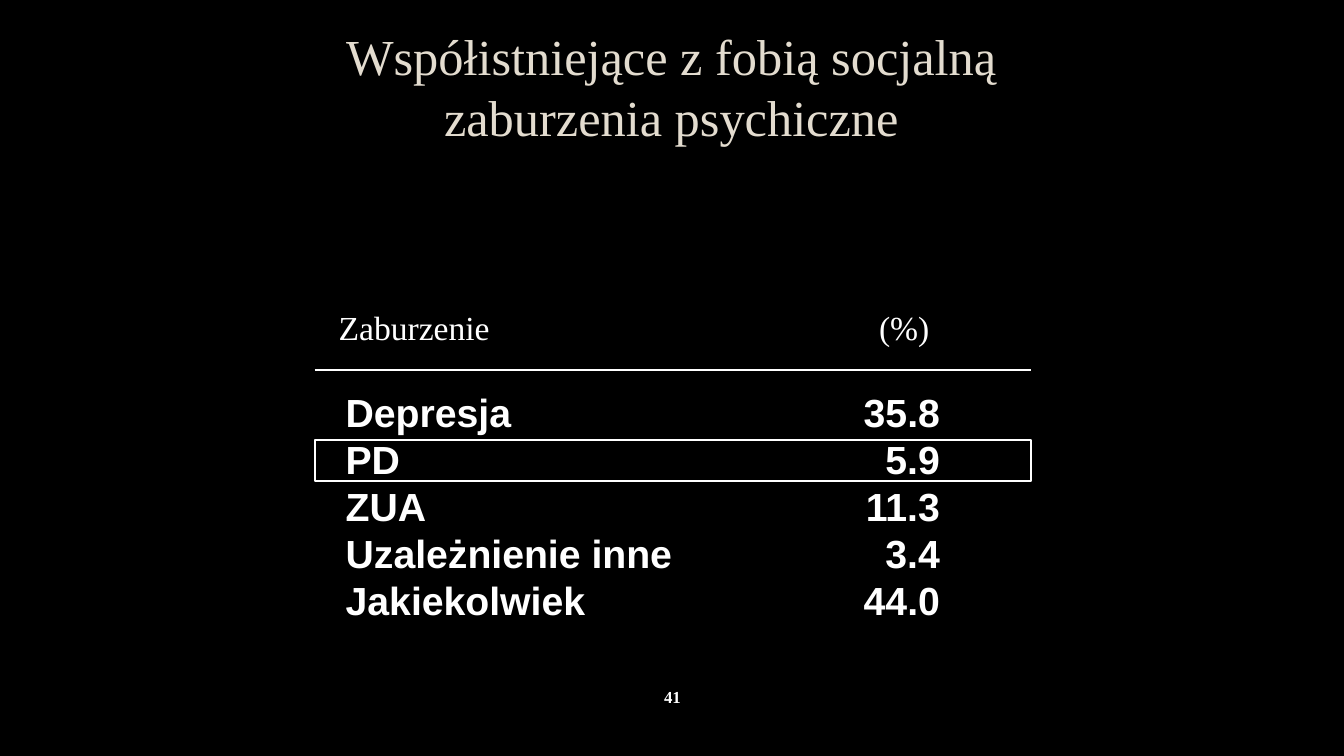
from lxml.etree import SubElement
from pptx import Presentation
from pptx.dml.color import RGBColor
from pptx.enum.shapes import MSO_CONNECTOR, MSO_SHAPE
from pptx.enum.text import MSO_ANCHOR, MSO_AUTO_SIZE, PP_ALIGN
from pptx.oxml.ns import qn
from pptx.util import Inches, Pt

WHITE, BLACK, CREAM = "FFFFFF", "000000", "E3DCCF"
SERIF, SANS = "Times New Roman", "Arial"
TABLE_LEFT, TABLE_WIDTH = 3.12, 7.11
RULE_TOP = 3.67
ROW_TOP, ROW_PITCH = 3.85, 0.466
HIGHLIGHTED_ROW, HIGHLIGHT_HEIGHT = 1, 0.4
DISORDERS = [
    ("Depresja", "35.8"),
    ("PD", "5.9"),
    ("ZUA", "11.3"),
    ("Uzależnienie inne", "3.4"),
    ("Jakiekolwiek", "44.0"),
]


def color(hex_value):
    return RGBColor.from_string(hex_value)


def place(shape, left, top, width, height):
    shape.left, shape.top = Inches(left), Inches(top)
    shape.width, shape.height = Inches(width), Inches(height)


def add_tab(paragraph, position, alignment):
    tabs = SubElement(paragraph._p.get_or_add_pPr(), qn("a:tabLst"))
    SubElement(tabs, qn("a:tab"), pos=str(Inches(position)), algn=alignment)


def write(frame, lines, size, face, hex_value, bold=False, align=PP_ALIGN.LEFT,
          anchor=MSO_ANCHOR.TOP, spacing=None, before=0, tab=None):
    frame.word_wrap = True
    frame.vertical_anchor = anchor
    frame.text = "\n".join(lines)
    for paragraph in frame.paragraphs:
        paragraph.alignment = align
        paragraph.space_before = Pt(before)
        if spacing:
            paragraph.line_spacing = Pt(spacing)
        if tab:
            add_tab(paragraph, *tab)
        font = paragraph.font
        font.size, font.name, font.bold = Pt(size), face, bold
        font.color.rgb = color(hex_value)


def add_text(slide, box, lines, *style, **layout):
    frame = slide.shapes.add_textbox(*map(Inches, box)).text_frame
    write(frame, lines, *style, **layout)
    return frame


def outline(shape):
    shape.line.color.rgb = color(WHITE)
    shape.line.width = Pt(1.5)


def add_title(slide, text):
    title = slide.shapes.title
    place(title, 2.37, 0.2, 8.58, 1.3)
    write(title.text_frame, [text], 36, SERIF, CREAM, align=PP_ALIGN.CENTER,
          anchor=MSO_ANCHOR.BOTTOM, spacing=43)
    title.text_frame.auto_size = MSO_AUTO_SIZE.NONE


def add_header_rule(slide):
    rule = slide.shapes.add_connector(
        MSO_CONNECTOR.STRAIGHT, Inches(TABLE_LEFT), Inches(RULE_TOP),
        Inches(TABLE_LEFT + TABLE_WIDTH), Inches(RULE_TOP))
    outline(rule)
    SubElement(rule._element.spPr, qn("a:effectLst"))


def add_highlight(slide):
    row_middle = ROW_TOP + (HIGHLIGHTED_ROW + 0.5) * ROW_PITCH
    highlight = slide.shapes.add_shape(
        MSO_SHAPE.RECTANGLE, Inches(TABLE_LEFT),
        Inches(row_middle + 0.02 - HIGHLIGHT_HEIGHT / 2),
        Inches(TABLE_WIDTH), Inches(HIGHLIGHT_HEIGHT))
    highlight.fill.background()
    highlight.shadow.inherit = False
    outline(highlight)


def add_page_number(slide, number):
    frame = add_text(slide, (5.89, 6.75, 1.56, 0.33), [number], 12, SERIF, WHITE,
                     bold=True, align=PP_ALIGN.CENTER, anchor=MSO_ANCHOR.MIDDLE)
    frame.margin_left = frame.margin_right = 0
    frame.margin_top = frame.margin_bottom = 0


def main():
    deck = Presentation()
    deck.slide_width, deck.slide_height = Inches(13.33), Inches(7.5)
    slide = deck.slides.add_slide(deck.slide_layouts[5])
    slide.background.fill.solid()
    slide.background.fill.fore_color.rgb = color(BLACK)

    add_title(slide, "Współistniejące z fobią socjalną zaburzenia psychiczne")

    # Column headings and rule
    add_text(slide, (3.26, 3, 7.39, 0.86), ["Zaburzenie\t(%)"], 24, SERIF, WHITE,
             before=4.8, tab=(5.61, "ctr"))
    add_header_rule(slide)

    # Disorders with values aligned on the decimal point
    add_text(slide, (3.33, ROW_TOP - 0.05, 7.38, 2.44),
             ["\t".join(row) for row in DISORDERS], 28, SANS, WHITE,
             bold=True, spacing=ROW_PITCH * 72, tab=(5.57, "dec"))
    add_highlight(slide)

    add_page_number(slide, "41")
    deck.save("out.pptx")


if __name__ == "__main__":
    main()
